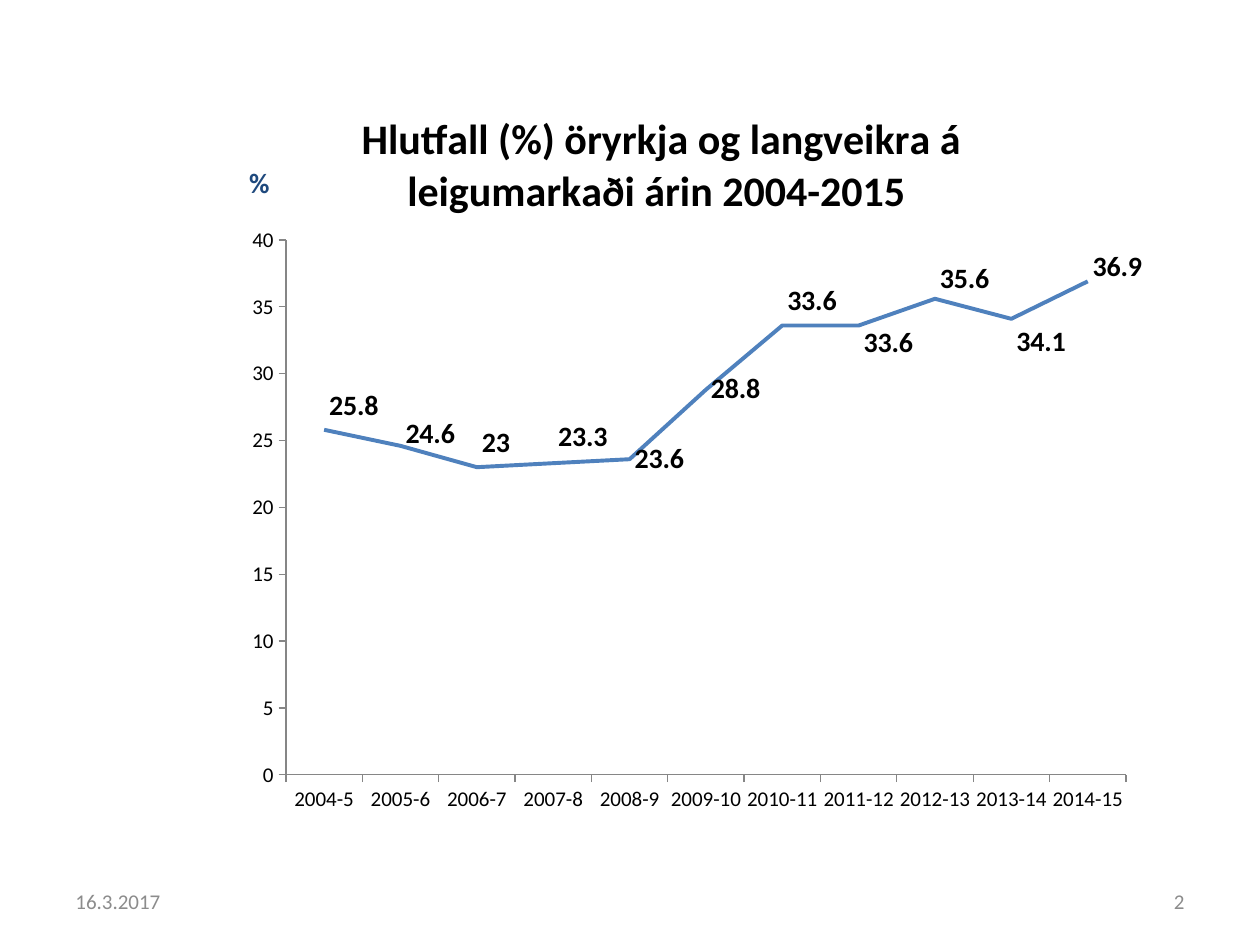
from lxml.etree import SubElement
from pptx import Presentation
from pptx.chart.data import CategoryChartData
from pptx.dml.color import RGBColor
from pptx.enum.chart import XL_CHART_TYPE, XL_LABEL_POSITION, XL_TICK_MARK
from pptx.enum.text import MSO_ANCHOR, PP_ALIGN
from pptx.oxml import parse_xml
from pptx.oxml.ns import nsdecls, qn
from pptx.util import Pt

PX = 914400 / 126
BLACK = RGBColor(0x00, 0x00, 0x00)
NAVY = RGBColor(0x1F, 0x49, 0x7D)
BLUE = RGBColor(0x4F, 0x81, 0xBD)
GRAY = RGBColor(0x8C, 0x8C, 0x8C)
AXIS_GRAY = RGBColor(0x86, 0x86, 0x86)

RENT_SHARES = {
    "2004-5": 25.8, "2005-6": 24.6, "2006-7": 23, "2007-8": 23.3,
    "2008-9": 23.6, "2009-10": 28.8, "2010-11": 33.6, "2011-12": 33.6,
    "2012-13": 35.6, "2013-14": 34.1, "2014-15": 36.9,
}
LABEL_SHIFTS = [-24, -12, -24, -26, 0, 0, -24, 18, -19, 24, -14]


def emu(*lengths):
    return [round(length * PX) for length in lengths]


def apply(target, formats):
    for name, value in formats.items():
        setattr(target, name, value)


def format_font(font, size, color=BLACK, bold=False):
    apply(font, {"name": "Calibri", "size": Pt(size), "bold": bold})
    font.color.rgb = color


def place(element, index, **settings):
    for old_layout in element.findall(qn("c:layout")):
        element.remove(old_layout)
    layout = parse_xml(f"<c:layout {nsdecls('c')}/>")
    manual = SubElement(layout, qn("c:manualLayout"))
    for name, value in settings.items():
        SubElement(manual, qn(f"c:{name}")).set("val", str(value))
    element.insert(index, layout)


def add_footer_text(slide, box, wording, alignment):
    frame = slide.shapes.add_textbox(*emu(*box)).text_frame
    apply(frame, {"word_wrap": True, "vertical_anchor": MSO_ANCHOR.MIDDLE})
    paragraph = frame.paragraphs[0]
    apply(paragraph, {"text": wording, "alignment": alignment})
    format_font(paragraph.runs[0].font, 12, GRAY)


def add_heading(owner, wording, size, color, x, y):
    frame = owner.text_frame
    frame.text = wording
    format_font(frame.paragraphs[0].runs[0].font, size, color, True)
    owner.element.xpath(".//a:bodyPr")[0].set("rot", "0")
    place(owner.element, 1, xMode="edge", yMode="edge", x=x, y=y)


def add_rent_chart(slide, box):
    width, height = box[2:]

    def across(length):
        return round(length / width, 4)

    def down(length):
        return round(length / height, 4)

    data = CategoryChartData()
    data.categories = list(RENT_SHARES)
    data.add_series("Series 1", list(RENT_SHARES.values()))
    chart = slide.shapes.add_chart(XL_CHART_TYPE.LINE, *emu(*box), data).chart
    apply(chart, {"has_legend": False, "has_title": True})
    format_font(chart.font, 10)
    add_heading(chart.chart_title, "Hlutfall (%) öryrkja og langveikra á leigumarkaði árin 2004-2015 ",
                24, BLACK, across(173), down(27))
    chart.chart_title.include_in_layout = False

    shares = chart.value_axis
    apply(shares, {"minimum_scale": 0, "maximum_scale": 40, "major_unit": 5, "has_title": True})
    add_heading(shares.axis_title, "%", 16, NAVY, across(63), down(83))
    for axis in (chart.category_axis, shares):
        apply(axis, {"has_major_gridlines": False, "major_tick_mark": XL_TICK_MARK.OUTSIDE,
                     "minor_tick_mark": XL_TICK_MARK.NONE})
        format_font(axis.tick_labels.font, 12)
        axis.format.line.color.rgb = AXIS_GRAY
        axis.format.line.width = Pt(0.75)

    place(chart.element.xpath(".//c:plotArea")[0], 0, layoutTarget="inner", xMode="edge", yMode="edge",
          x=across(105), y=down(164), w=across(840), h=down(535))

    plot = chart.plots[0]
    plot.vary_by_categories = False
    series = plot.series[0]
    series.smooth = False
    series.format.line.color.rgb = BLUE
    series.format.line.width = Pt(2.25)
    apply(series.data_labels, {"show_value": True, "position": XL_LABEL_POSITION.RIGHT})
    format_font(series.data_labels.font, 16, bold=True)
    for number, shift in enumerate(LABEL_SHIFTS):
        if shift:
            label = series.points[number].data_label
            format_font(label.font, 16, bold=True)
            label.position = XL_LABEL_POSITION.RIGHT
            label_element = series.data_labels._element.xpath(f"c:dLbl[c:idx/@val='{number}']")[0]
            place(label_element, 1, x=0, y=down(shift))


def main():
    presentation = Presentation()
    slide_width, slide_height = emu(1260, 945)
    apply(presentation, {"slide_width": slide_width, "slide_height": slide_height})
    slide = presentation.slides.add_slide(presentation.slide_layouts[6])
    add_footer_text(slide, (63, 876, 294, 50), "16.3.2017", PP_ALIGN.LEFT)
    add_footer_text(slide, (903, 876, 294, 50), "2", PP_ALIGN.RIGHT)
    add_rent_chart(slide, (181, 76, 965, 752))
    presentation.save("out.pptx")


if __name__ == "__main__":
    main()
